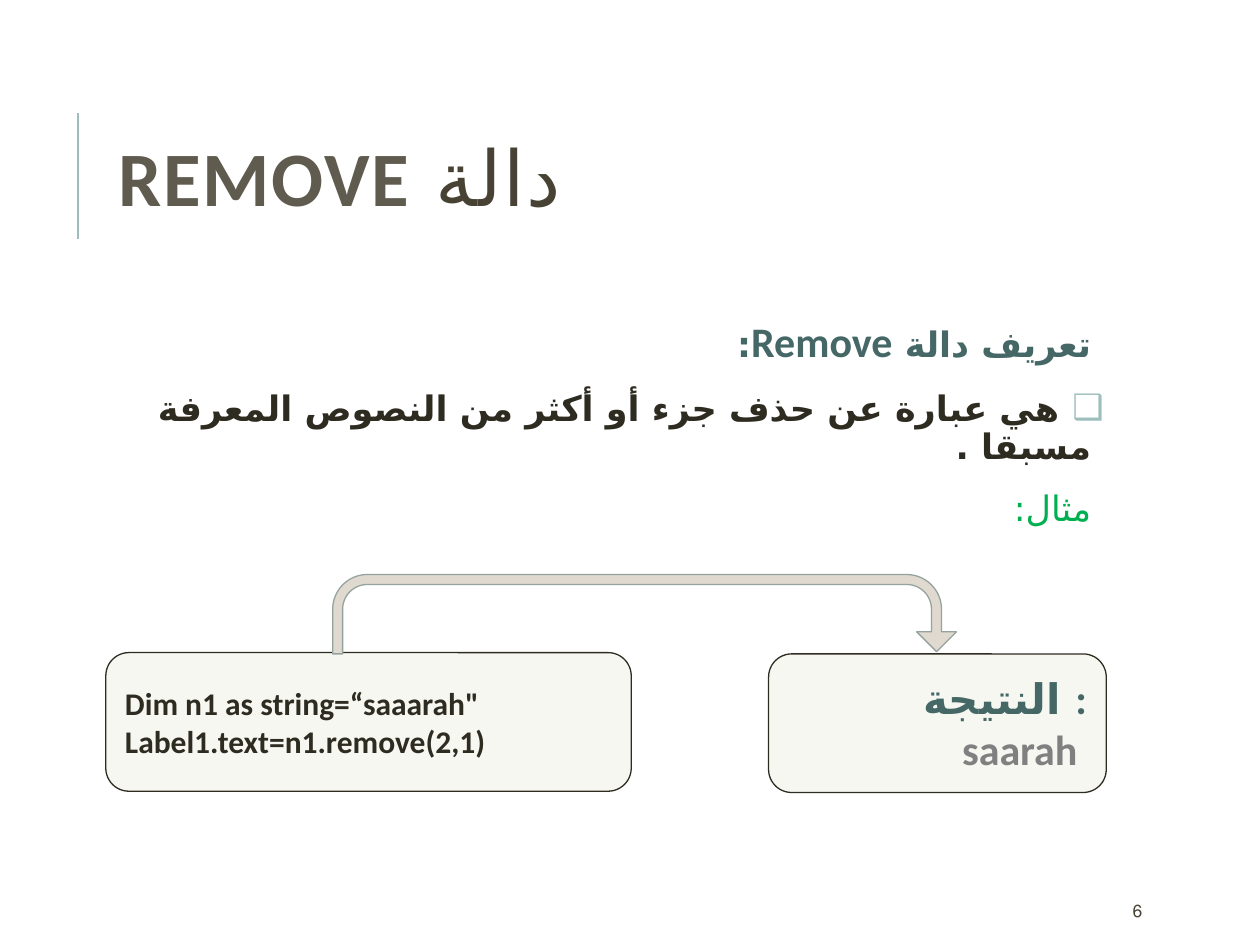
"""Build the slide that explains the Remove function with an example."""
from lxml import etree
from pptx import Presentation
from pptx import util as u
from pptx.dml.color import RGBColor
from pptx.enum import shapes, text
from pptx.oxml.ns import qn

COLORS = {
    "title": "474233", "keyword": "605B4F", "heading": "456867", "ink": "2E2B21",
    "example": "00B050", "result": "808080", "accent": "9CBEBD",
    "box": "F7F7F2", "arrow": "E0D9D0", "arrow_line": "95A39D",
}
ARABIC_FONT = "DejaVu Sans"
LEFT, RIGHT = text.PP_ALIGN.LEFT, text.PP_ALIGN.RIGHT


def write(paragraph, runs, size, color, bold=False, align=LEFT, rtl=False):
    paragraph.alignment = align
    properties = paragraph._p.get_or_add_pPr()
    if rtl:
        properties.set("rtl", "1")
    font = paragraph.font
    font.name, font.size, font.bold = "Calibri", u.Pt(size), bold
    font.color.rgb = RGBColor.from_string(COLORS[color])
    if not "".join(runs).isascii():
        etree.SubElement(properties.find(qn("a:defRPr")), qn("a:cs"), typeface=ARABIC_FONT)
    for content in runs:
        paragraph.add_run().text = content
    return paragraph


def add_filled(kind, box, fill, line):
    shape = slide.shapes.add_shape(kind, *map(u.Inches, box))
    shape.shadow.inherit = False
    shape.fill.solid()
    shape.fill.fore_color.rgb = RGBColor.from_string(COLORS[fill])
    shape.line.color.rgb = RGBColor.from_string(COLORS[line])
    shape.line.width = u.Pt(0.75)
    return shape


presentation = Presentation()
presentation.slide_width, presentation.slide_height = u.Inches(10), u.Inches(7.5)
slide = presentation.slides.add_slide(presentation.slide_layouts[1])

rule = slide.shapes.add_connector(
    shapes.MSO_CONNECTOR.STRAIGHT, *map(u.Inches, (0.62, 1.9, 0.62, 0.9)))
rule.line.color.rgb = RGBColor.from_string(COLORS["accent"])
rule.line.width = u.Pt(1.5)
etree.SubElement(rule._element.spPr, qn("a:effectLst"))

title, body = slide.shapes.title, slide.placeholders[1]
for placeholder, top, height in ((title, 0.64, 1.64), (body, 2.5, 4.4)):
    placeholder.left, placeholder.top = u.Inches(0.84), u.Inches(top)
    placeholder.width, placeholder.height = u.Inches(7.97), u.Inches(height)
    placeholder.text_frame.auto_size = text.MSO_AUTO_SIZE.NONE

title.text_frame.vertical_anchor = text.MSO_ANCHOR.MIDDLE
heading = write(title.text_frame.paragraphs[0], ["دالة ", "REMOVE"], 44, "title", rtl=True)
heading.line_spacing = 0.8
for run in heading.runs:
    run._r.get_or_add_rPr().set("spc", "100")
keyword = heading.runs[1].font
keyword.bold = True
keyword.color.rgb = RGBColor.from_string(COLORS["keyword"])

frame = body.text_frame
frame.margin_left = frame.margin_right = u.Inches(0.05)
frame.margin_top = frame.margin_bottom = u.Inches(0.05)
definition = [
    (" ", ["تعريف دالة ", "Remove", ":"], "heading", True),
    ("❑", [" هي عبارة عن حذف جزء أو أكثر من النصوص المعرفة مسبقا . "], "ink", True),
    (" ", ["مثال: "], "example", False),
]
for index, (bullet, runs, color, bold) in enumerate(definition):
    paragraph = frame.add_paragraph() if index else frame.paragraphs[0]
    properties = paragraph._p.get_or_add_pPr()
    properties.set("marL", str(u.Inches(0.1)))
    properties.set("indent", str(-u.Inches(0.1)))
    bullet_color = etree.SubElement(properties, qn("a:buClr"))
    etree.SubElement(bullet_color, qn("a:srgbClr"), val=COLORS["accent"])
    etree.SubElement(properties, qn("a:buChar"), char=bullet)
    write(paragraph, runs, 20, color, bold, RIGHT, rtl=True)
    paragraph.line_spacing = 0.9
    paragraph.space_before, paragraph.space_after = u.Pt(12), u.Pt(2)
frame.paragraphs[0].runs[1].font.size = u.Pt(24)

number = slide.shapes.add_textbox(*map(u.Inches, (8.89, 7.08, 0.8, 0.3))).text_frame
number.word_wrap = True
number.vertical_anchor = text.MSO_ANCHOR.MIDDLE
write(number.paragraphs[0], ["6"], 10, "title", rtl=True)

examples = [
    ((0.84, 5.18, 4.17, 1.1), 18, LEFT,
     [('Dim n1 as string=“saaarah"', "ink", False),
      ("Label1.text=n1.remove(2,1)", "ink", True)]),
    ((6.1, 5.19, 2.68, 1.1), 24, RIGHT,
     [("النتيجة :", "heading", False), ("saarah ", "result", False)]),
]
for box, size, align, lines in examples:
    frame = add_filled(shapes.MSO_SHAPE.ROUNDED_RECTANGLE, box, "box", "ink").text_frame
    frame.vertical_anchor = text.MSO_ANCHOR.MIDDLE
    for index, (content, color, rtl) in enumerate(lines):
        paragraph = frame.add_paragraph() if index else frame.paragraphs[0]
        write(paragraph, [content], size, color, True, align, rtl)

arrow = add_filled(
    shapes.MSO_SHAPE.U_TURN_ARROW, (2.64, 4.56, 4.95, 0.63), "arrow", "arrow_line")
for index, value in enumerate((0.126, 0.25, 0.25, 0.438, 0.973)):
    arrow.adjustments[index] = value

presentation.save("out.pptx")
